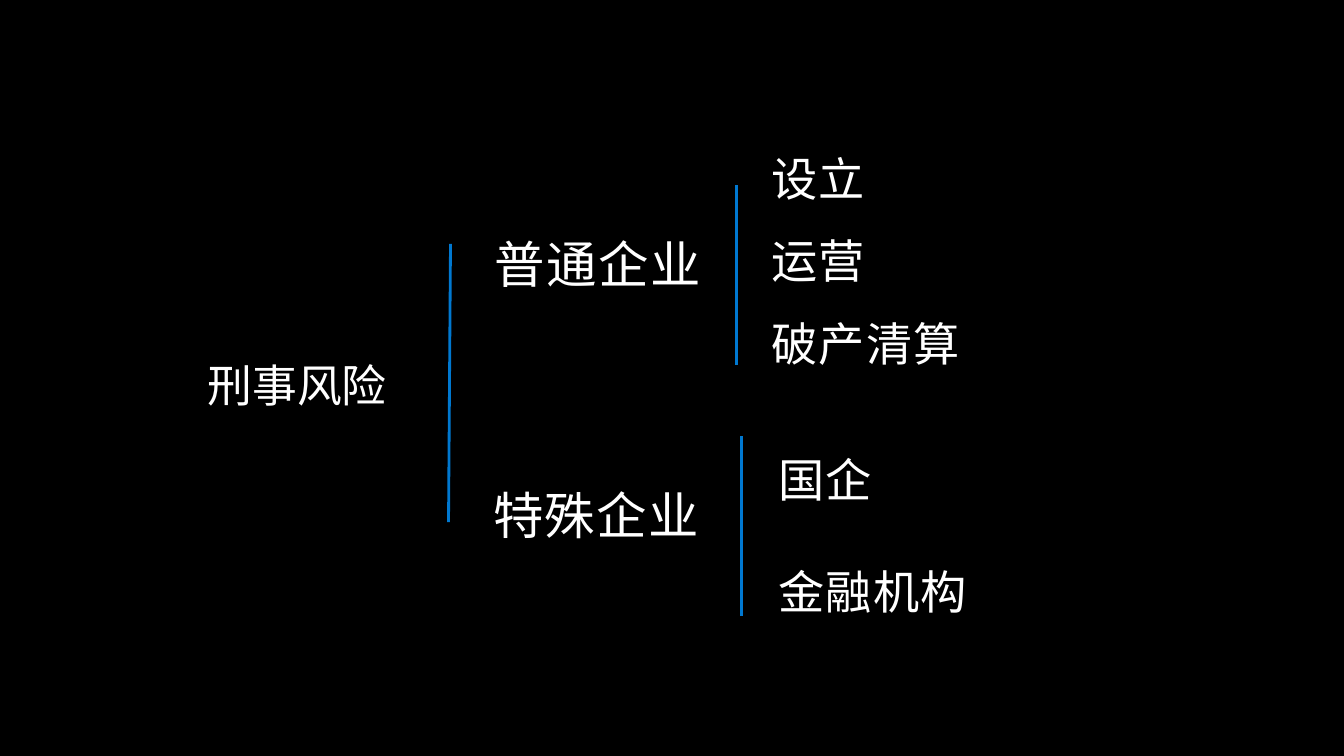
"""Build a bracket diagram of criminal risks for ordinary and special enterprises."""
from lxml import etree
from pptx import Presentation
from pptx.dml.color import RGBColor
from pptx.enum import shapes, text
from pptx.oxml import ns
from pptx.util import Pt

BLACK = RGBColor(0x00, 0x00, 0x00)
WHITE = RGBColor(0xFF, 0xFF, 0xFF)
BLUE = RGBColor(0x00, 0x78, 0xD0)
FONT = "Noto Sans CJK SC"
INSET = 4.32

ROOT = {"label": "刑事风险", "box": (100, 254.2, 224.6, 40.3)}
ROOT_BRACKET = (321.8, 174.2, 320.4, 373)
BRANCHES = [
    {
        "label": "普通企业",
        "box": (310.3, 159.8, 233.3, 43.9),
        "bracket": (526.3, 132.5, 526.3, 260.6),
        "left": 546.5, "top": 100.1, "step": 59,
        "items": [("设立", 248.4), ("运营", 216), ("破产清算", 216)],
    },
    {
        "label": "特殊企业",
        "box": (329, 339.1, 193.7, 43.9),
        "bracket": (529.9, 311.8, 529.9, 439.9),
        "left": 551.5, "top": 315.4, "step": 79.9,
        "items": [("国企", 257.8), ("金融机构", 198)],
    },
]
ITEM_HEIGHT = 41.8


def add_label(slide, label, box, size, centred=True, line_spacing=1.3, tracking=0):
    text_box = slide.shapes.add_textbox(*map(Pt, box))
    frame = text_box.text_frame
    frame.text = label
    frame.word_wrap = True
    frame.auto_size = text.MSO_AUTO_SIZE.SHAPE_TO_FIT_TEXT
    frame.vertical_anchor = text.MSO_ANCHOR.MIDDLE
    frame.margin_left = frame.margin_right = Pt(INSET)
    frame.margin_top = frame.margin_bottom = Pt(INSET)
    paragraph = frame.paragraphs[0]
    paragraph.alignment = text.PP_ALIGN.CENTER if centred else text.PP_ALIGN.LEFT
    paragraph.line_spacing = line_spacing
    run = paragraph.runs[0]
    run.font.size = Pt(size)
    run.font.color.rgb = WHITE
    run.font.name = FONT
    properties = run.font._element
    etree.SubElement(properties, ns.qn("a:ea")).set("typeface", FONT)
    if tracking:
        properties.set("spc", str(round(tracking * 100)))


def add_bracket(slide, ends):
    connector = slide.shapes.add_connector(
        shapes.MSO_CONNECTOR.STRAIGHT, *map(Pt, ends))
    connector.line.color.rgb = BLUE
    connector.line.width = Pt(2)
    etree.SubElement(connector._element.spPr, ns.qn("a:effectLst"))


def main():
    presentation = Presentation()
    presentation.slide_width = Pt(960)
    presentation.slide_height = Pt(540)
    slide = presentation.slides.add_slide(presentation.slide_layouts[6])
    slide.background.fill.solid()
    slide.background.fill.fore_color.rgb = BLACK

    add_label(slide, ROOT["label"], ROOT["box"], 32, line_spacing=1.0)
    add_bracket(slide, ROOT_BRACKET)
    for branch in BRANCHES:
        add_label(slide, branch["label"], branch["box"], 36, tracking=1.1)
        add_bracket(slide, branch["bracket"])
        for row, (item, width) in enumerate(branch["items"]):
            top = branch["top"] + row * branch["step"]
            box = (branch["left"], top, width, ITEM_HEIGHT)
            add_label(slide, item, box, 33, centred=False, tracking=1)

    presentation.save("out.pptx")


if __name__ == "__main__":
    main()
